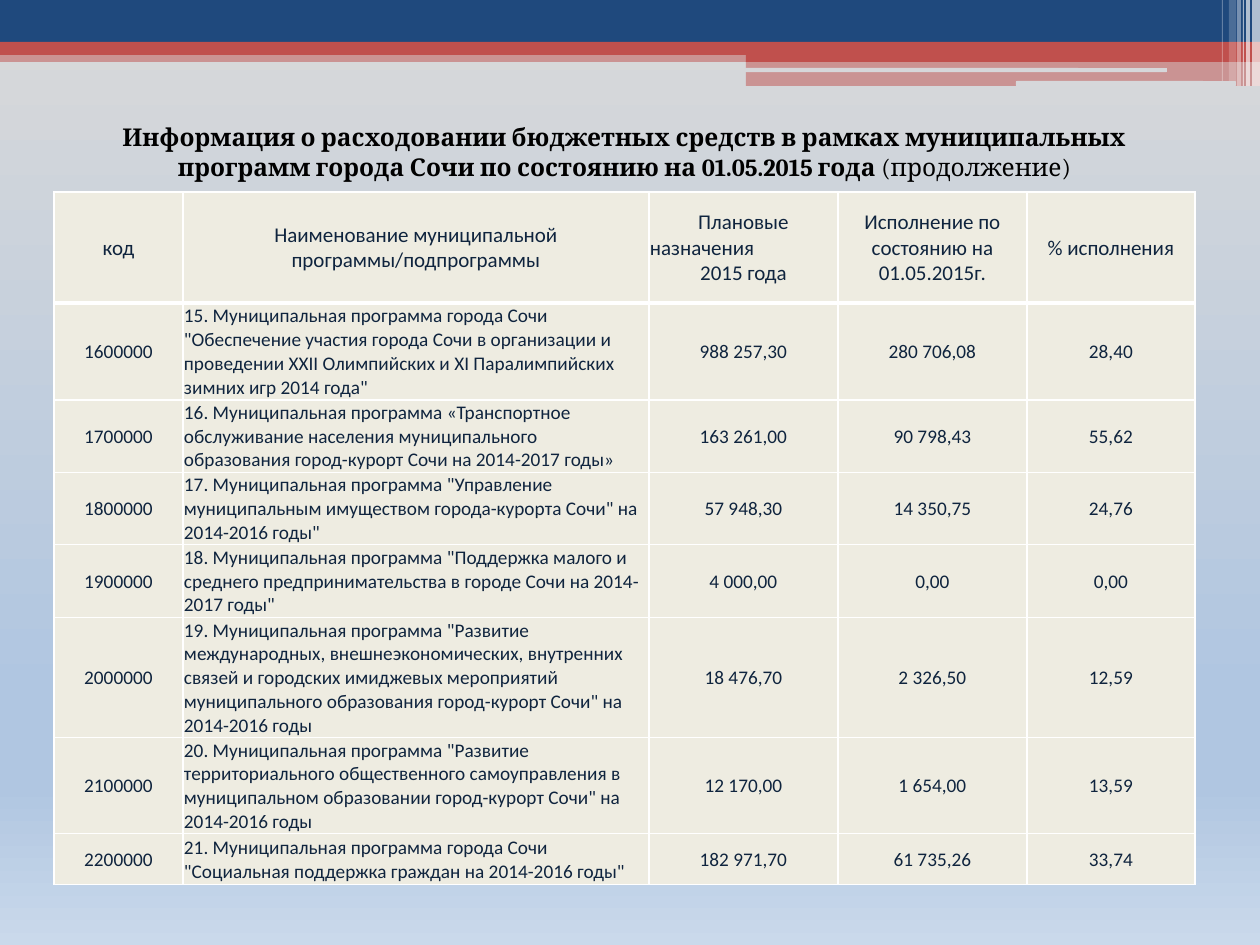
from dataclasses import dataclass

from lxml.etree import SubElement
from pptx import Presentation
from pptx.dml.color import RGBColor
from pptx.enum.shapes import MSO_SHAPE
from pptx.enum.text import MSO_ANCHOR, MSO_AUTO_SIZE, PP_ALIGN
from pptx.oxml.ns import qn
from pptx.slide import Slide
from pptx.table import _Cell
from pptx.text.text import TextFrame
from pptx.util import Emu, Pt

EMU_PER_PX = 914400 / 126

NAVY = RGBColor(0x1F, 0x49, 0x7D)
RED = RGBColor(0xC0, 0x50, 0x4D)
WHITE = RGBColor(0xFF, 0xFF, 0xFF)
BLACK = RGBColor(0x00, 0x00, 0x00)
INK = RGBColor(0x0F, 0x24, 0x3E)
CREAM = RGBColor(0xEE, 0xEC, 0xE1)
PALE_GREY = RGBColor(0xD6, 0xD7, 0xDA)
BACKDROP_STOPS = [
    (0, RGBColor(0xD9, 0xD9, 0xD9)),
    (74, RGBColor(0xB0, 0xC6, 0xE1)),
    (83, RGBColor(0xB0, 0xC6, 0xE1)),
    (100, RGBColor(0xCA, 0xD9, 0xEB)),
]


@dataclass(frozen=True)
class Band:
    left: int
    top: int
    width: int
    height: int
    color: RGBColor
    opacity: int = 100
    rounded: bool = False


@dataclass(frozen=True)
class Program:
    code: str
    name: str
    plan: str
    actual: str
    percent: str
    height: int


@dataclass(frozen=True)
class Line:
    text: str
    align: PP_ALIGN = PP_ALIGN.CENTER


BANDS = [
    Band(0, 50, 1260, 12, RED, 50),
    Band(0, 0, 1260, 43, NAVY),
    Band(0, 42, 1260, 13, RED),
    Band(746, 49, 514, 13, RED),
    Band(746, 61, 514, 25, RED, 50),
    Band(745, 68, 422, 4, PALE_GREY, rounded=True),
    Band(1016, 81, 220, 5, PALE_GREY, rounded=True),
    Band(1252, 0, 8, 86, WHITE, 65),
    Band(1246, 0, 4, 86, WHITE, 65),
    Band(1243, 0, 1, 86, WHITE, 60),
    Band(1237, 0, 4, 86, WHITE, 40),
    Band(1229, 0, 7, 81, WHITE, 20),
    Band(1222, 0, 1, 81, WHITE, 30),
]

COLUMN_WIDTHS = [129, 466, 189, 189, 168]
HEADER_HEIGHT = 111
HEADERS = [
    [Line("код")],
    [Line("Наименование муниципальной программы/подпрограммы")],
    [Line("Плановые"), Line("назначения", PP_ALIGN.LEFT), Line("2015 года")],
    [Line("Исполнение по состоянию на 01.05.2015г.")],
    [Line("% исполнения")],
]
PROGRAMS = [
    Program("1600000", '15. Муниципальная программа города Сочи "Обеспечение участия города Сочи '
            'в организации и проведении XXII Олимпийских и XI Паралимпийских зимних игр 2014 года"',
            "988 257,30", "280 706,08", "28,40", 97),
    Program("1700000", "16. Муниципальная программа «Транспортное обслуживание населения "
            "муниципального образования город-курорт Сочи на 2014-2017 годы»",
            "163 261,00", "90 798,43", "55,62", 72),
    Program("1800000", '17. Муниципальная программа "Управление муниципальным имуществом '
            'города-курорта Сочи" на 2014-2016 годы"',
            "57 948,30", "14 350,75", "24,76", 72),
    Program("1900000", '18. Муниципальная программа "Поддержка малого и среднего '
            'предпринимательства в городе Сочи на 2014-2017 годы"',
            "4 000,00", "0,00", "0,00", 73),
    Program("2000000", '19. Муниципальная программа "Развитие международных, внешнеэкономических, '
            'внутренних связей и городских имиджевых мероприятий муниципального образования '
            'город-курорт Сочи" на 2014-2016 годы',
            "18 476,70", "2 326,50", "12,59", 120),
    Program("2100000", '20. Муниципальная программа "Развитие территориального общественного '
            'самоуправления в муниципальном образовании город-курорт Сочи" на 2014-2016 годы',
            "12 170,00", "1 654,00", "13,59", 96),
    Program("2200000", '21. Муниципальная программа города Сочи "Социальная поддержка граждан '
            'на 2014-2016 годы"',
            "182 971,70", "61 735,26", "33,74", 51),
]


def px(length: int) -> Emu:
    return Emu(round(length * EMU_PER_PX))


def paint_backdrop(page: Slide) -> None:
    fill = page.background.fill
    fill.gradient()
    fill.gradient_angle = 270
    stops = page.element.find(".//" + qn("a:gsLst"))
    for stop in list(stops):
        stops.remove(stop)
    for percent, color in BACKDROP_STOPS:
        stop = SubElement(stops, qn("a:gs"), pos=str(percent * 1000))
        SubElement(stop, qn("a:srgbClr"), val=str(color))


def draw_band(page: Slide, band: Band) -> None:
    kind = MSO_SHAPE.ROUNDED_RECTANGLE if band.rounded else MSO_SHAPE.RECTANGLE
    shape = page.shapes.add_shape(kind, px(band.left), px(band.top), px(band.width), px(band.height))
    shape.shadow.inherit = False
    shape.line.fill.background()
    shape.fill.solid()
    shape.fill.fore_color.rgb = band.color
    if band.opacity < 100:
        color = shape.element.spPr.find(".//" + qn("a:srgbClr"))
        SubElement(color, qn("a:alpha"), val=str(band.opacity * 1000))


def write_lines(frame: TextFrame, lines: list[Line], size: int) -> None:
    for index, line in enumerate(lines):
        para = frame.paragraphs[0] if index == 0 else frame.add_paragraph()
        para.alignment = line.align
        span = para.add_run()
        span.text = line.text
        span.font.name = "Calibri"
        span.font.size = Pt(size)
        span.font.color.rgb = INK


def set_borders(cell: _Cell, top: int, bottom: int) -> None:
    """Rule all four sides in white; top and bottom are widths in points."""
    properties = cell._tc.get_or_add_tcPr()
    for index, (side, width) in enumerate([("L", 1), ("R", 1), ("T", top), ("B", bottom)]):
        border = properties.makeelement(qn(f"a:ln{side}"), {"w": str(Pt(width))})
        fill = SubElement(border, qn("a:solidFill"))
        SubElement(fill, qn("a:srgbClr"), val=str(WHITE))
        properties.insert(index, border)


def draw_table(page: Slide) -> None:
    heights = [HEADER_HEIGHT] + [program.height for program in PROGRAMS]
    rows = [HEADERS] + [
        [[Line(program.code)], [Line(program.name, PP_ALIGN.LEFT)], [Line(program.plan)],
         [Line(program.actual)], [Line(program.percent)]]
        for program in PROGRAMS
    ]
    table = page.shapes.add_table(len(rows), len(COLUMN_WIDTHS), px(54), px(192),
                                  px(sum(COLUMN_WIDTHS)), px(sum(heights))).table
    for column, width in zip(table.columns, COLUMN_WIDTHS):
        column.width = px(width)
    for row_index, (height, row) in enumerate(zip(heights, rows)):
        table.rows[row_index].height = px(height)
        for column_index, lines in enumerate(row):
            cell = table.cell(row_index, column_index)
            cell.margin_left = cell.margin_right = cell.margin_top = px(1)
            cell.margin_bottom = 0
            cell.vertical_anchor = MSO_ANCHOR.MIDDLE
            cell.fill.solid()
            cell.fill.fore_color.rgb = CREAM
            set_borders(cell, 3 if row_index == 1 else 1, 3 if row_index == 0 else 1)
            write_lines(cell.text_frame, lines, 12 if row_index == 0 else 11)


def draw_title(page: Slide) -> None:
    box = page.shapes.add_textbox(px(64), px(116), px(1121), px(72))
    box.text_frame.word_wrap = True
    box.text_frame.auto_size = MSO_AUTO_SIZE.SHAPE_TO_FIT_TEXT
    para = box.text_frame.paragraphs[0]
    para.alignment = PP_ALIGN.CENTER
    for text, bold in [
        ("Информация о расходовании бюджетных средств в рамках муниципальных программ "
         "города Сочи по состоянию на 01.05.2015 года ", True),
        ("(продолжение)", False),
    ]:
        span = para.add_run()
        span.text = text
        span.font.name = "Cambria"
        span.font.size = Pt(14)
        span.font.bold = bold
        span.font.color.rgb = BLACK


def main() -> None:
    deck = Presentation()
    deck.slide_width, deck.slide_height = px(1260), px(945)
    page = deck.slides.add_slide(deck.slide_layouts[6])
    paint_backdrop(page)
    for band in BANDS:
        draw_band(page, band)
    draw_table(page)
    draw_title(page)
    deck.save("out.pptx")


if __name__ == "__main__":
    main()
